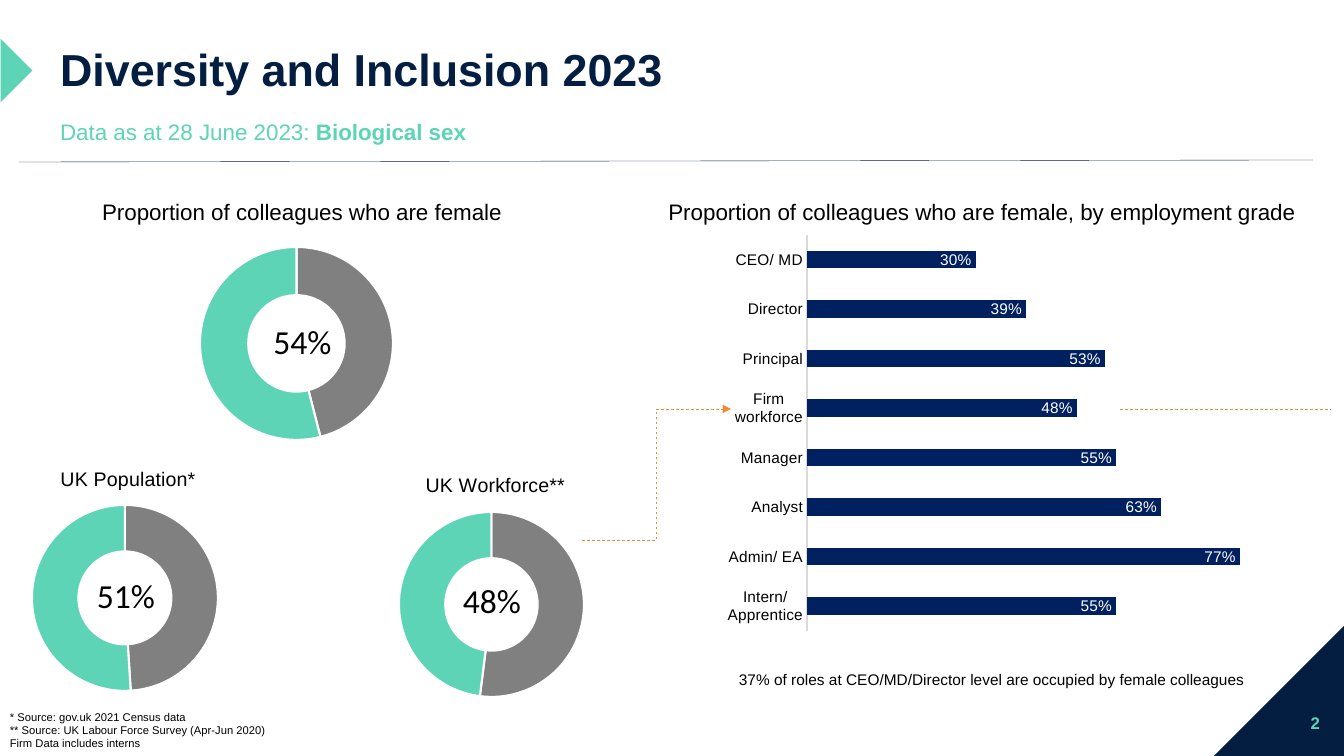
from lxml import etree
from pptx import Presentation
from pptx import util as u
from pptx.chart.data import CategoryChartData
from pptx.dml.color import RGBColor
from pptx.enum import chart as ch, dml, shapes, text
from pptx.oxml import parse_xml
from pptx.oxml.ns import nsdecls, qn

EMU_PER_PX = 914400 / 100.8
NAVY, TEAL, ORANGE = "041E42", "5CD4B5", "F18934"
GREY, BLACK, WHITE = "808080", "000000", "FFFFFF"
BAR_BLUE, AXIS_GREY = "002060", "D9D9D9"
LEFT, CENTER, RIGHT = text.PP_ALIGN.LEFT, text.PP_ALIGN.CENTER, text.PP_ALIGN.RIGHT
TOP, MIDDLE = text.MSO_ANCHOR.TOP, text.MSO_ANCHOR.MIDDLE
GRADES = {"CEO/ MD": 0.3, "Director": 0.39, "Principal": 0.53, "Firm workforce": 0.48,
          "Manager": 0.55, "Analyst": 0.63, "Admin/ EA": 0.77, "Intern/ Apprentice": 0.55}


def px(*values):
    return [u.Emu(round(v * EMU_PER_PX)) for v in values]


def rgb(color):
    return RGBColor.from_string(color)


def set_font(font, size, color, name="Arial", bold=False):
    for key, value in {"size": u.Pt(size), "name": name, "bold": bold}.items():
        setattr(font, key, value)
    font.color.rgb = rgb(color)


def fill_frame(tf, lines, size, color, name="Arial", bold=False, align=LEFT,
               anchor=TOP, spacing=None, inset=None):
    """Each line is a list of (text, bold) pairs, or a plain string."""
    fmt = {"word_wrap": True, "auto_size": text.MSO_AUTO_SIZE.NONE, "vertical_anchor": anchor}
    if inset is not None:
        fmt.update({f"margin_{side}": inset for side in ("left", "right", "top", "bottom")})
    for key, value in fmt.items():
        setattr(tf, key, value)
    for i, line in enumerate(lines):
        p = tf.add_paragraph() if i else tf.paragraphs[0]
        p.alignment = align
        p.space_before = u.Pt(0)
        if spacing:
            p.line_spacing = spacing
        for words, heavy in [(line, bold)] if isinstance(line, str) else line:
            r = p.add_run()
            r.text = words
            set_font(r.font, size, color, name, heavy)


def add_text(s, box, lines, size, color=BLACK, **fmt):
    fill_frame(s.shapes.add_textbox(*px(*box)).text_frame, lines, size, color, **fmt)


def fill_placeholder(sp, box, lines, size, color, **fmt):
    sp.left, sp.top, sp.width, sp.height = px(*box)
    fill_frame(sp.text_frame, lines, size, color, spacing=0.9, **fmt)


def add_triangle(s, box, rotation, color):
    sp = s.shapes.add_shape(shapes.MSO_SHAPE.RIGHT_TRIANGLE, *px(*box))
    sp.rotation = rotation
    sp.shadow.inherit = False
    sp.fill.solid()
    sp.fill.fore_color.rgb = rgb(color)
    sp.line.fill.background()


def add_line(s, ends, color, width, kind=shapes.MSO_CONNECTOR.STRAIGHT, dashed=False, arrow=False):
    line = s.shapes.add_connector(kind, *px(*ends))
    line.line.color.rgb = rgb(color)
    line.line.width = u.Pt(width)
    if dashed:
        line.line.dash_style = dml.MSO_LINE.DASH
    if arrow:
        etree.SubElement(line.line._get_or_add_ln(), qn("a:tailEnd"), type="triangle")
    etree.SubElement(line._element.spPr, qn("a:effectLst"))


def place_in_chart(parent, index, chart_box, box, inner=False):
    """Lay out a chart part at a slide box, as fractions of the chart frame."""
    left, top, width, height = chart_box
    parts = {"x": (box[0] - left) / width, "y": (box[1] - top) / height}
    if len(box) == 4:
        parts.update(w=box[2] / width, h=box[3] / height)
    for old in parent.findall(qn("c:layout")):
        parent.remove(old)
    target = '<c:layoutTarget val="inner"/>' if inner else ""
    modes = '<c:xMode val="edge"/><c:yMode val="edge"/>'
    sizes = "".join(f'<c:{k} val="{v:.4f}"/>' for k, v in parts.items())
    parent.insert(index, parse_xml(
        f'<c:layout {nsdecls("c")}><c:manualLayout>{target}{modes}{sizes}'
        '</c:manualLayout></c:layout>'))


def add_chart(s, kind, box, plot_box, values, number_format="General"):
    data = CategoryChartData(number_format=number_format)
    data.categories = list(values)
    data.add_series("Series 1", list(values.values()))
    chart = s.shapes.add_chart(kind, *px(*box), data).chart
    chart.has_legend = False
    chart.has_title = False
    set_font(chart.font, 10, BLACK)
    place_in_chart(chart._chartSpace.chart.plotArea, 0, box, plot_box, inner=True)
    return chart


def add_ring(s, box, ring, female, label_box, title=None, title_at=None):
    """Doughnut of the female share, with the share written in its hole."""
    chart = add_chart(s, ch.XL_CHART_TYPE.DOUGHNUT, box, ring, {"1": 100 - female, "2": female})
    plot = chart.plots[0]
    plot.has_data_labels = False
    plot._element.find(qn("c:holeSize")).set("val", "75")
    for i, color in enumerate((GREY, TEAL)):
        fmt = plot.series[0].points[i].format
        fmt.fill.solid()
        fmt.fill.fore_color.rgb = rgb(color)
        fmt.line.color.rgb = rgb(WHITE)
        fmt.line.width = u.Pt(1.5)
    if title:
        tf = chart.chart_title.text_frame
        tf.text = title
        set_font(tf.paragraphs[0].runs[0].font, 14, BLACK)
        place_in_chart(chart.chart_title._element, 1, box, title_at)
    add_text(s, label_box, [f"{female}%"], 24, name="Calibri", align=CENTER, anchor=MIDDLE, inset=0)


def add_grade_bars(s):
    chart = add_chart(s, ch.XL_CHART_TYPE.BAR_CLUSTERED, (716, 227, 608, 413),
                      (807, 235, 506, 396), GRADES, "0%")
    plot = chart.plots[0]
    plot.gap_width = 182
    plot.vary_by_categories = False
    fill = plot.series[0].format.fill
    fill.solid()
    fill.fore_color.rgb = rgb(BAR_BLUE)
    plot.has_data_labels = True
    labels = plot.data_labels
    for key, value in {"show_value": True, "number_format": "0%", "number_format_is_linked": False,
                       "position": ch.XL_LABEL_POSITION.INSIDE_END}.items():
        setattr(labels, key, value)
    set_font(labels.font, 11, WHITE)
    grades, shares = chart.category_axis, chart.value_axis
    for key, value in {"reverse_order": True, "has_major_gridlines": False,
                       "major_tick_mark": ch.XL_TICK_MARK.NONE}.items():
        setattr(grades, key, value)
    set_font(grades.tick_labels.font, 11, BLACK)
    grades.format.line.color.rgb = rgb(AXIS_GREY)
    grades.format.line.width = u.Pt(0.75)
    for key, value in {"minimum_scale": 0, "maximum_scale": 0.9, "visible": False,
                       "has_major_gridlines": False}.items():
        setattr(shares, key, value)


def main():
    prs = Presentation()
    prs.slide_width, prs.slide_height = px(1344, 756)
    s = prs.slides.add_slide(prs.slide_layouts[1])

    add_triangle(s, (1212, 625, 133, 133), 270, NAVY)
    add_triangle(s, (-22, 48, 45, 45), 225, TEAL)
    add_line(s, (19, 162, 1313, 160), NAVY, 0.25)

    fill_placeholder(s.shapes.title, (50, 40, 973, 64), ["Diversity and Inclusion 2023"],
                     32, NAVY, bold=True, anchor=MIDDLE)
    body = s.placeholders[1]
    fill_placeholder(body, (50, 116, 854, 41),
                     [[("Data as at 28 June 2023: ", False), ("Biological sex", True)]], 16, TEAL)
    pPr = body.text_frame.paragraphs[0]._p.get_or_add_pPr()
    pPr.set("marL", "0")
    pPr.set("indent", "0")
    etree.SubElement(pPr, qn("a:buNone"))

    for left, width, heading in ((77, 450, "Proportion of colleagues who are female"),
                                 (641, 682, "Proportion of colleagues who are female, "
                                            "by employment grade")):
        add_text(s, (left, 185, width, 41), [heading], 16, align=CENTER, spacing=1.3)

    add_ring(s, (130, 233, 334, 223), (200, 247, 193, 193), 54, (241, 321, 123, 40))
    add_ring(s, (-70, 449, 390, 258), (32, 505, 186, 186), 51, (78, 575, 96, 40),
             "UK Population*", (57, 463))
    add_ring(s, (296, 453, 390, 258), (399, 512, 185, 185), 48, (444, 580, 96, 40),
             "UK Workforce**", (422, 469))

    add_grade_bars(s)
    add_line(s, (582, 540, 731, 409), ORANGE, 0.5, shapes.MSO_CONNECTOR.ELBOW,
             dashed=True, arrow=True)
    add_line(s, (1120, 409, 1331, 409), ORANGE, 0.5, dashed=True)

    add_text(s, (729, 665, 682, 29),
             ["37% of roles at CEO/MD/Director level are occupied by female colleagues"], 11)
    add_text(s, (0, 705, 527, 50),
             ["* Source: gov.uk 2021 Census data",
              "** Source: UK Labour Force Survey (Apr-Jun 2020)",
              "Firm Data includes interns"], 8)
    add_text(s, (1264, 703, 66, 40), ["2"], 12, TEAL, bold=True, align=RIGHT, anchor=MIDDLE)
    prs.save("out.pptx")


if __name__ == "__main__":
    main()
